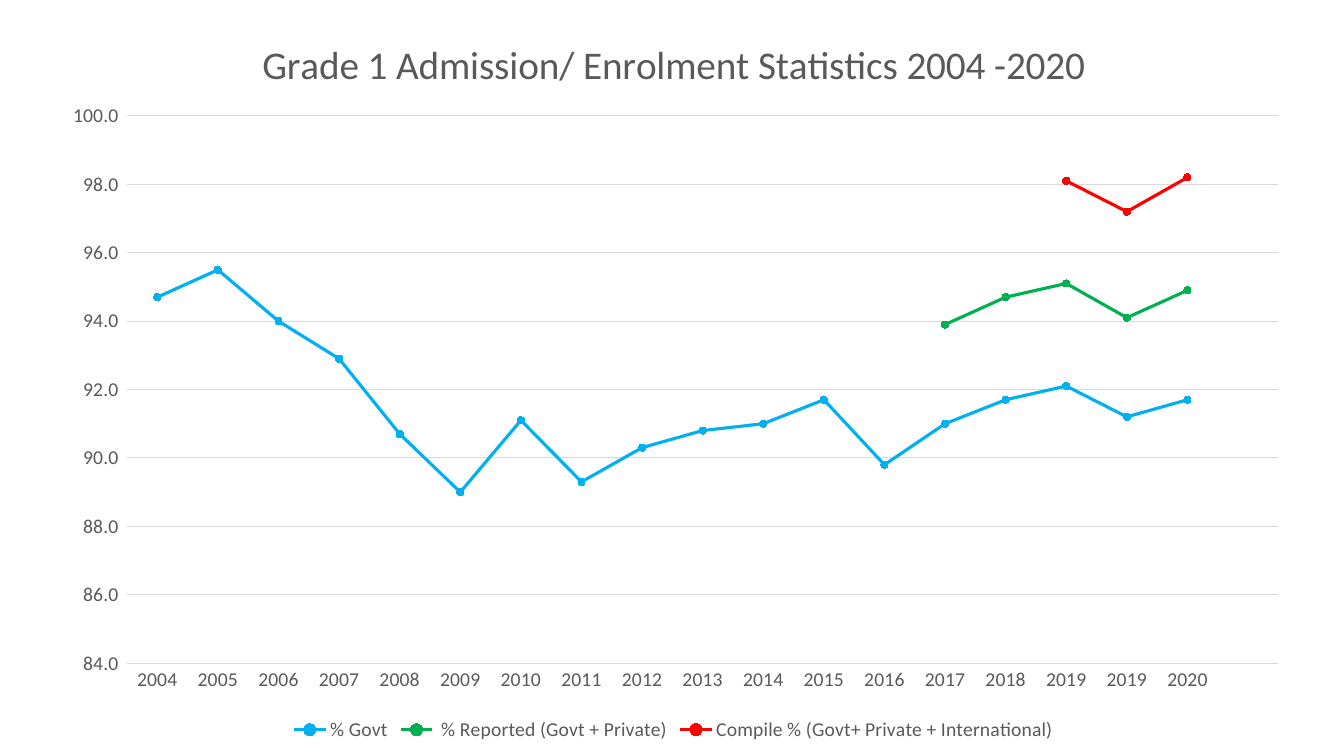
from lxml import etree
from pptx import Presentation
from pptx.chart.data import CategoryChartData
from pptx.dml.color import RGBColor
from pptx.enum.chart import XL_CHART_TYPE, XL_LEGEND_POSITION, XL_MARKER_STYLE, XL_TICK_MARK
from pptx.oxml.ns import qn
from pptx.util import Inches, Pt

BLUE = RGBColor(0x00, 0xB0, 0xF0)
GREEN = RGBColor(0x00, 0xB0, 0x50)
RED = RGBColor(0xFF, 0x00, 0x00)
TEXT_GRAY = RGBColor(0x59, 0x59, 0x59)
LINE_GRAY = RGBColor(0xD9, 0xD9, 0xD9)
FONT_NAME = "Calibri"

TITLE = "Grade 1 Admission/ Enrolment Statistics 2004 -2020"
YEARS = [str(year) for year in range(2004, 2020)] + ["2019", "2020", ""]
SERIES = [
    ("% Govt", BLUE, 2004,
     [94.7, 95.5, 94.0, 92.9, 90.7, 89.0, 91.1, 89.3, 90.3,
      90.8, 91.0, 91.7, 89.8, 91.0, 91.7, 92.1, 91.2, 91.7]),
    (" % Reported (Govt + Private)", GREEN, 2017, [93.9, 94.7, 95.1, 94.1, 94.9]),
    ("Compile % (Govt+ Private + International)", RED, 2019, [98.1, 97.2, 98.2]),
]
NUMBER_FORMAT = '_(* #,##0.0_);_(* \\(#,##0.0\\);_(* "-"?_)'

CHART_BOX = (0.43, 0.11, 12.5, 7.29)
PLOT_BOX = (1.26, 1.15, 11.42, 5.43)


def set_font(font, size):
    font.name = FONT_NAME
    font.size = Pt(size)
    font.bold = False
    font.color.rgb = TEXT_GRAY


def place_plot(chart):
    left, top, width, height = CHART_BOX
    plot_left, plot_top, plot_width, plot_height = PLOT_BOX
    plot_area = chart._chartSpace.chart.plotArea
    for old_layout in plot_area.findall(qn("c:layout")):
        plot_area.remove(old_layout)
    layout = etree.Element(qn("c:layout"))
    manual = etree.SubElement(layout, qn("c:manualLayout"))
    settings = [
        ("layoutTarget", "inner"), ("xMode", "edge"), ("yMode", "edge"),
        ("x", (plot_left - left) / width), ("y", (plot_top - top) / height),
        ("w", plot_width / width), ("h", plot_height / height),
    ]
    for name, value in settings:
        etree.SubElement(manual, qn(f"c:{name}")).set("val", str(value))
    plot_area.insert(0, layout)


presentation = Presentation()
presentation.slide_width = Inches(13.33)
presentation.slide_height = Inches(7.5)
slide = presentation.slides.add_slide(presentation.slide_layouts[6])

chart_data = CategoryChartData(number_format=NUMBER_FORMAT)
chart_data.categories = YEARS
for name, color, first_year, values in SERIES:
    gap = YEARS.index(str(first_year))
    tail = len(YEARS) - gap - len(values)
    chart_data.add_series(name, [None] * gap + values + [None] * tail)

chart = slide.shapes.add_chart(
    XL_CHART_TYPE.LINE_MARKERS, *map(Inches, CHART_BOX), chart_data).chart
chart.font.name = FONT_NAME
chart.font.size = Pt(10)
place_plot(chart)

chart.has_title = True
title_frame = chart.chart_title.text_frame
title_frame.text = TITLE
set_font(title_frame.paragraphs[0].font, 28)
chart.chart_title.include_in_layout = False

chart.has_legend = True
chart.legend.position = XL_LEGEND_POSITION.BOTTOM
chart.legend.include_in_layout = False
set_font(chart.legend.font, 14)

category_axis, value_axis = chart.category_axis, chart.value_axis
for axis in (category_axis, value_axis):
    axis.major_tick_mark = XL_TICK_MARK.NONE
    axis.minor_tick_mark = XL_TICK_MARK.NONE
    set_font(axis.tick_labels.font, 14)

value_axis.minimum_scale = 84
value_axis.maximum_scale = 100
value_axis.major_unit = 2
value_axis.tick_labels.number_format = NUMBER_FORMAT
value_axis.tick_labels.number_format_is_linked = False
value_axis.format.line.fill.background()
for line in (category_axis.format.line, value_axis.major_gridlines.format.line):
    line.color.rgb = LINE_GRAY
    line.width = Pt(0.75)

plot = chart.plots[0]
plot.vary_by_categories = False
for series, (name, color, first_year, values) in zip(plot.series, SERIES):
    series.smooth = False
    series.format.line.color.rgb = color
    series.format.line.width = Pt(2.25)
    series.marker.style = XL_MARKER_STYLE.CIRCLE
    series.marker.size = 5
    series.marker.format.fill.solid()
    series.marker.format.fill.fore_color.rgb = color
    series.marker.format.line.color.rgb = color

presentation.save("out.pptx")
